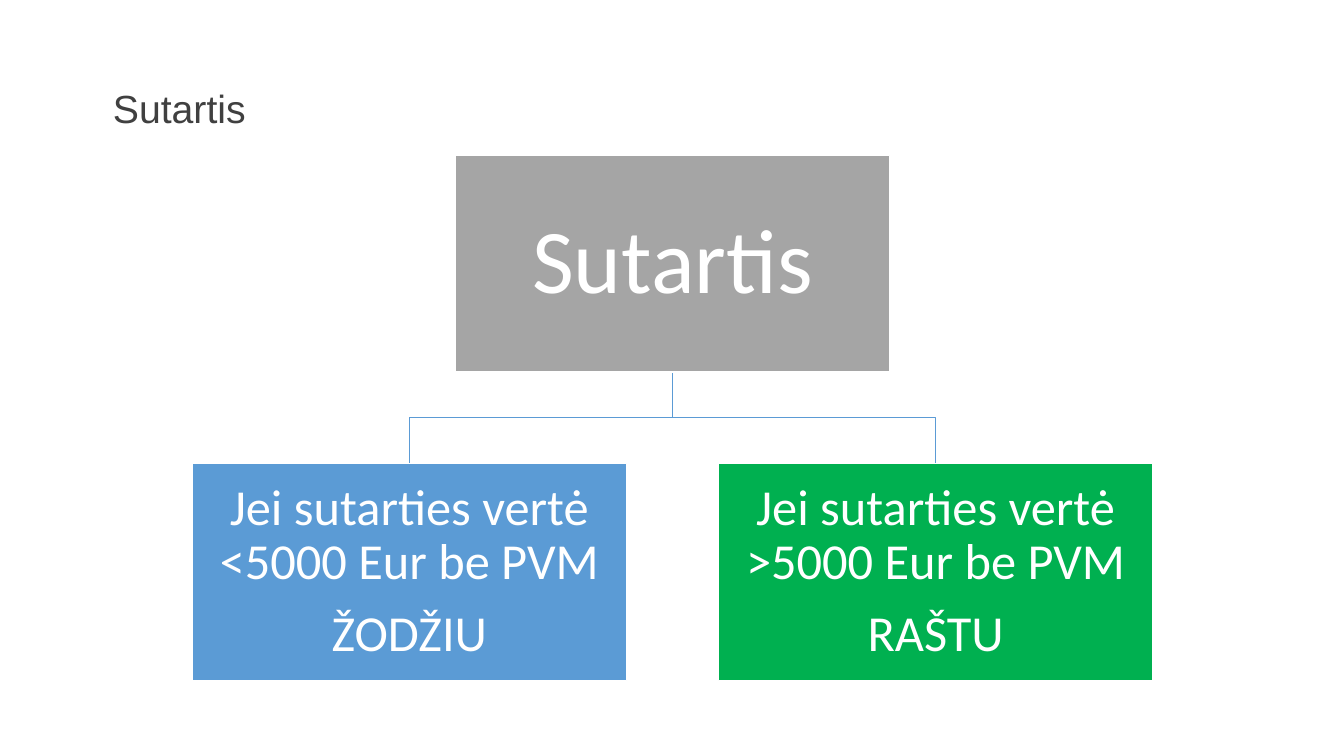
from pptx import Presentation
from pptx.dml.color import RGBColor
from pptx.enum.shapes import MSO_SHAPE
from pptx.enum.text import MSO_ANCHOR, MSO_AUTO_SIZE, PP_ALIGN
from pptx.util import Inches, Pt

WHITE = RGBColor(0xFF, 0xFF, 0xFF)
DARK = RGBColor(0x40, 0x40, 0x40)
GREY = RGBColor(0xA5, 0xA5, 0xA5)
BLUE = RGBColor(0x5B, 0x9B, 0xD5)
GREEN = RGBColor(0x00, 0xB0, 0x50)

# Content
TITLE = "Sutartis"
ROOT = (["Sutartis"], GREY, 65, 0.05)
BRANCHES = [
    (["Jei sutarties vertė <5000 Eur be PVM", "ŽODŽIU"], BLUE, 36, 0.03),
    (["Jei sutarties vertė >5000 Eur be PVM", "RAŠTU"], GREEN, 36, 0.03),
]

# Grid of the tree, in inches
SLIDE_WIDTH, SLIDE_HEIGHT = 13.33, 7.5
BOX_WIDTH, BOX_HEIGHT, GAP = 4.31, 2.15, 0.91
CENTRE, ROOT_TOP = 6.67, 1.54
ROOT_BOTTOM = ROOT_TOP + BOX_HEIGHT
BRANCH_TOP = ROOT_BOTTOM + GAP


def style_text(frame, size, font, color):
    for para in frame.paragraphs:
        for span in para.runs:
            span.font.size = Pt(size)
            span.font.name = font
            span.font.color.rgb = color


def set_margins(frame, left, other):
    frame.margin_left = Inches(left)
    frame.margin_top = frame.margin_right = frame.margin_bottom = Inches(other)


def add_box(page, centre, top, node):
    lines, color, size, margin = node
    box = page.shapes.add_shape(
        MSO_SHAPE.RECTANGLE, Inches(centre - BOX_WIDTH / 2), Inches(top),
        Inches(BOX_WIDTH), Inches(BOX_HEIGHT))
    box.shadow.inherit = False
    box.fill.solid()
    box.fill.fore_color.rgb = color
    box.line.color.rgb = WHITE
    box.line.width = Pt(1)
    frame = box.text_frame
    frame.word_wrap = True
    frame.vertical_anchor = MSO_ANCHOR.MIDDLE
    set_margins(frame, margin, margin)
    frame.text = "\n".join(lines)
    for para in frame.paragraphs:
        para.alignment = PP_ALIGN.CENTER
        para.line_spacing = 0.9
        para.space_after = Pt(size * 0.35)
    style_text(frame, size, "Calibri", WHITE)


def add_branch_line(page, centre):
    middle = ROOT_BOTTOM + GAP / 2
    bends = [(CENTRE, middle), (centre, middle), (centre, BRANCH_TOP)]
    builder = page.shapes.build_freeform(Inches(CENTRE), Inches(ROOT_BOTTOM))
    builder.add_line_segments(
        [(Inches(x), Inches(y)) for x, y in bends], close=False)
    line = builder.convert_to_shape()
    line.shadow.inherit = False
    line.fill.background()
    line.line.color.rgb = BLUE
    line.line.width = Pt(1)


def main():
    deck = Presentation()
    deck.slide_width = Inches(SLIDE_WIDTH)
    deck.slide_height = Inches(SLIDE_HEIGHT)
    page = deck.slides.add_slide(deck.slide_layouts[5])

    # Title
    title = page.shapes.title
    title.left, title.top = Inches(0.92), Inches(0.84)
    title.width, title.height = Inches(7.34), Inches(0.6)
    frame = title.text_frame
    frame.text = TITLE
    frame.word_wrap = True
    frame.auto_size = MSO_AUTO_SIZE.NONE
    frame.vertical_anchor = MSO_ANCHOR.TOP
    set_margins(frame, 0.2, 0)
    frame.paragraphs[0].alignment = PP_ALIGN.LEFT
    style_text(frame, 28, "Arial", DARK)

    # Lines behind the boxes, then the tree
    first = CENTRE - (len(BRANCHES) - 1) * (BOX_WIDTH + GAP) / 2
    centres = [first + i * (BOX_WIDTH + GAP) for i in range(len(BRANCHES))]
    for centre in centres:
        add_branch_line(page, centre)
    add_box(page, CENTRE, ROOT_TOP, ROOT)
    for centre, branch in zip(centres, BRANCHES):
        add_box(page, centre, BRANCH_TOP, branch)

    deck.save("out.pptx")


if __name__ == "__main__":
    main()
